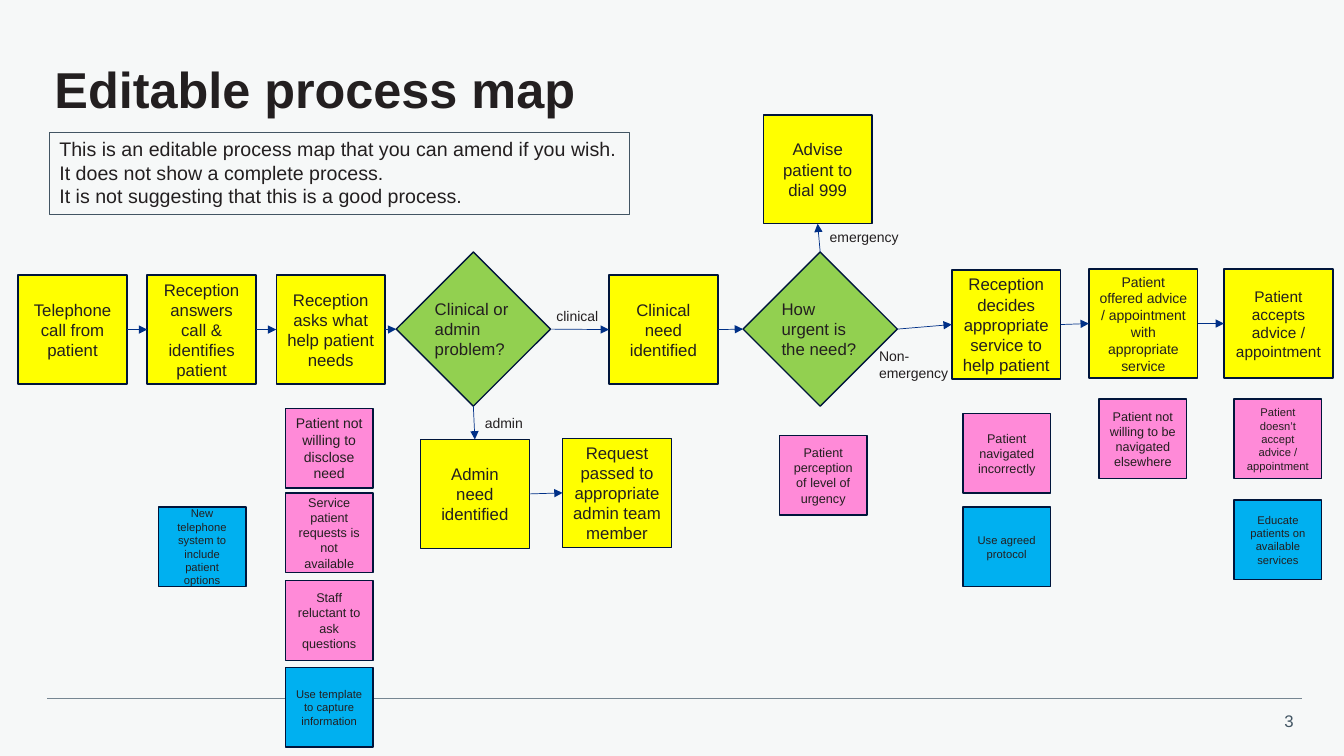
from lxml import etree
from pptx import Presentation
from pptx.dml.color import RGBColor
from pptx.enum.shapes import MSO_CONNECTOR, MSO_SHAPE
from pptx.enum.text import MSO_ANCHOR, MSO_AUTO_SIZE, PP_ALIGN
from pptx.oxml.ns import qn
from pptx.util import Inches, Pt

LEFT, CENTER, RIGHT = PP_ALIGN.LEFT, PP_ALIGN.CENTER, PP_ALIGN.RIGHT
TOP, MIDDLE = MSO_ANCHOR.TOP, MSO_ANCHOR.MIDDLE
NO_AUTOFIT = MSO_AUTO_SIZE.NONE
RECTANGLE, DIAMOND = MSO_SHAPE.RECTANGLE, MSO_SHAPE.DIAMOND
STRAIGHT = MSO_CONNECTOR.STRAIGHT

TEXT, SLATE, RULE, OUTLINE, ARROW = "231F20", "425563", "768692", "00153B", "003087"
YELLOW, GREEN, PINK, BLUE, BACKGROUND = "FFFF00", "92D050", "FF8AD8", "00B0F0", "F6F8F8"
SITES = {"top": 0, "left": 1, "bottom": 2, "right": 3}
STEP, DECISION = 1.08, 1.53
NOTE_WIDTH, NOTE_HEIGHT = 0.87, 0.79

STEPS = {
    "call": (0, 1.59, "Telephone call from patient", 12),
    "answer": (1.28, 1.59, "Reception answers call & identifies patient", 12),
    "ask": (2.56, 1.59, "Reception asks what help patient needs", 12),
    "clinical": (5.86, 1.59, "Clinical need identified", 12),
    "dial": (7.39, 0, "Advise patient to dial 999", 12),
    "admin": (3.99, 3.22, "Admin need identified", 12),
    "request": (5.4, 3.21, "Request passed to appropriate admin team member", 12),
    "decide": (9.26, 1.54, "Reception decides appropriate service to help patient", 12),
    "offer": (10.62, 1.53,
              "Patient offered advice / appointment with appropriate service", 10),
    "accept": (11.96, 1.53, "Patient accepts advice / appointment", 11),
}
DECISIONS = {
    "problem": (3.75, 1.36, "Clinical or admin problem?"),
    "urgency": (7.19, 1.36, "How urgent is the need?"),
}
LABELS = [
    (5.24, 1.86, 0.62, 0.27, "clinical"),
    (4.53, 2.92, 0.58, 0.27, "admin"),
    (7.95, 1.08, 0.89, 0.27, "emergency"),
    (8.44, 2.26, 0.94, 0.44, "Non- emergency"),
]
ARROWS = [
    ("call", "right", "answer", "left"),
    ("answer", "right", "ask", "left"),
    ("ask", "right", "problem", "left"),
    ("problem", "right", "clinical", "left"),
    ("problem", "bottom", "admin", "top"),
    ("admin", "right", "request", "left"),
    ("clinical", "right", "urgency", "left"),
    ("urgency", "top", "dial", "bottom"),
    ("urgency", "right", "decide", "left"),
    ("decide", "right", "offer", "left"),
    ("offer", "right", "accept", "left"),
]
NOTES = [
    (1.26, 0.09, PINK, "Patient not willing to disclose need", 10),
    (1.26, 0.93, PINK, "Service patient requests is not available", 9),
    (1.26, 1.8, PINK, "Staff reluctant to ask questions", 9),
    (1.26, 2.66, BLUE, "Use template to capture information", 8),
    (0, 1.07, BLUE, "New telephone system to include patient options", 8),
    (6.16, 0.36, PINK, "Patient perception of level of urgency", 9),
    (7.98, 0.14, PINK, "Patient navigated incorrectly", 9),
    (7.98, 1.07, BLUE, "Use agreed protocol", 8),
    (9.33, 0, PINK, "Patient not willing to be navigated elsewhere", 9),
    (10.67, 0, PINK, "Patient doesn’t accept advice / appointment", 8),
    (10.67, 1, BLUE, "Educate patients on available services", 8),
]


def color(value):
    """Return the colour for a hex string."""
    return RGBColor.from_string(value)


def write(shape, text, size=12, ink=TEXT, bold=False, align=LEFT, anchor=TOP,
          wrap=True, inset=None, spacing=None):
    """Fill a shape with formatted text, one paragraph per line."""
    frame = shape.text_frame
    frame.text = text
    frame.auto_size = NO_AUTOFIT
    frame.word_wrap = wrap
    frame.vertical_anchor = anchor
    if inset is not None:
        frame.margin_left = frame.margin_right = Inches(inset)
        frame.margin_top = frame.margin_bottom = Inches(inset)
    for paragraph in frame.paragraphs:
        paragraph.alignment = align
        if spacing:
            paragraph.line_spacing = spacing
        font = paragraph.font
        font.name, font.size, font.bold = "Arial", Pt(size), bold
        font.color.rgb = color(ink)


def add_text(slide, box, text, **style):
    """Add a text box and return it."""
    shape = slide.shapes.add_textbox(*map(Inches, box))
    write(shape, text, **style)
    return shape


def add_block(slide, kind, box, fill, text, **style):
    """Add a filled, outlined shape with middle-anchored text."""
    shape = slide.shapes.add_shape(kind, *map(Inches, box))
    shape.shadow.inherit = False
    shape.fill.solid()
    shape.fill.fore_color.rgb = color(fill)
    shape.line.color.rgb = color(OUTLINE)
    shape.line.width = Pt(1)
    write(shape, text, anchor=MIDDLE, **style)
    return shape


def add_line(slide, ink, start=(0, 0), end=(0, 0)):
    """Add a thin straight connector without a shadow."""
    line = slide.shapes.add_connector(STRAIGHT, *map(Inches, (*start, *end)))
    line.line.color.rgb = color(ink)
    line.line.width = Pt(0.5)
    etree.SubElement(line._element.spPr, qn("a:effectLst"))
    return line


def add_arrow(slide, source, source_side, target, target_side):
    """Join two shapes with an arrow."""
    arrow = add_line(slide, ARROW)
    arrow.begin_connect(source, SITES[source_side])
    arrow.end_connect(target, SITES[target_side])
    etree.SubElement(arrow.line._get_or_add_ln(), qn("a:tailEnd"), type="triangle")


def add_footer(slide, box):
    """Add the footer rule and the slide number."""
    left, top, width, _ = box
    add_line(slide, RULE, (left, top), (left + width, top))
    add_text(slide, (left + width - 0.39, top + 0.07, 0.41, 0.3), "3",
             size=12, ink=SLATE, align=RIGHT, wrap=False)


def add_header(slide, box):
    """Place the title and the framed introduction."""
    left, top, width, _ = box
    title = slide.shapes.title
    title.left, title.top = Inches(left + 0.05), Inches(top)
    title.width, title.height = Inches(width), Inches(0.95)
    write(title, "Editable process map", size=36, bold=True, anchor=MIDDLE,
          inset=0, spacing=0.9)
    introduction = add_text(
        slide, (left, top + 0.87, 5.75, 0.82),
        "This is an editable process map that you can amend if you wish.\n"
        "It does not show a complete process.\n"
        "It is not suggesting that this is a good process.", size=14)
    introduction.line.color.rgb = color(SLATE)
    introduction.line.width = Pt(0.75)


def add_process(slide, box):
    """Draw the steps, decisions, labels and arrows of the process."""
    left, top = box[:2]
    blocks = {}
    for name, (x, y, text, size) in STEPS.items():
        blocks[name] = add_block(slide, RECTANGLE, (left + x, top + y, STEP, STEP),
                                 YELLOW, text, size=size, align=CENTER)
    for name, (x, y, text) in DECISIONS.items():
        blocks[name] = add_block(slide, DIAMOND, (left + x, top + y, DECISION, DECISION),
                                 GREEN, text, inset=0)
    for x, y, width, height, text in LABELS:
        add_text(slide, (left + x, top + y, width, height), text, size=10)
    for source, source_side, target, target_side in ARROWS:
        add_arrow(slide, blocks[source], source_side, blocks[target], target_side)


def add_notes(slide, box):
    """Place the pink problem notes and the blue solution notes."""
    left, top = box[:2]
    for x, y, fill, text, size in NOTES:
        add_block(slide, RECTANGLE, (left + x, top + y, NOTE_WIDTH, NOTE_HEIGHT),
                  fill, text, size=size, align=CENTER)


def main():
    """Build the process map slide."""
    presentation = Presentation()
    presentation.slide_width, presentation.slide_height = Inches(13.33), Inches(7.5)
    slide = presentation.slides.add_slide(presentation.slide_layouts[5])
    slide.background.fill.solid()
    slide.background.fill.fore_color.rgb = color(BACKGROUND)
    add_footer(slide, (0.47, 6.93, 12.44, 0.4))
    add_header(slide, (0.49, 0.44, 12.47, 1.69))
    add_process(slide, (0.18, 1.14, 13.04, 4.3))
    add_notes(slide, (1.57, 3.96, 11.54, 3.45))
    presentation.save("out.pptx")


if __name__ == "__main__":
    main()
